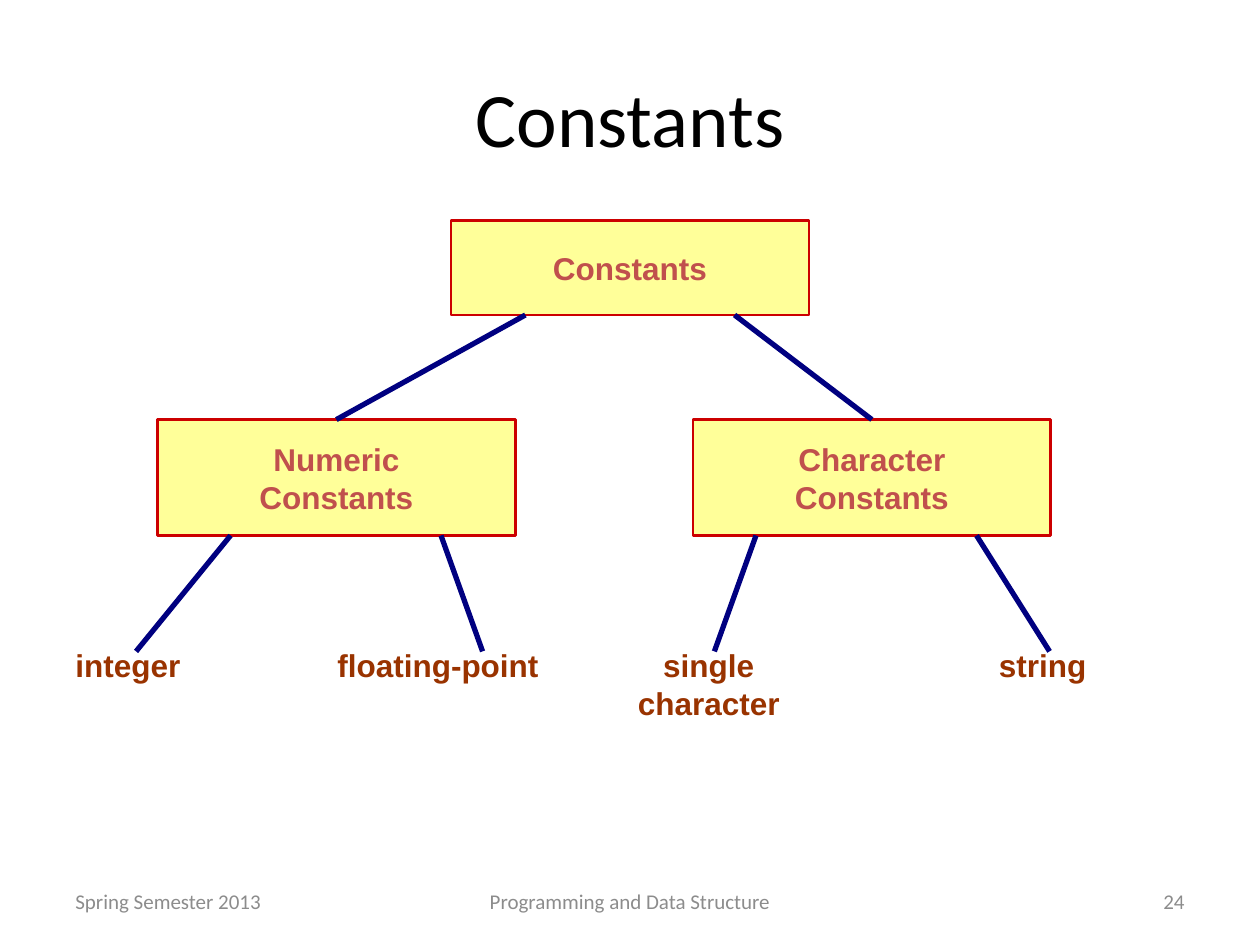
from dataclasses import dataclass

from lxml.etree import SubElement
from pptx import Presentation
from pptx.dml.color import RGBColor
from pptx.enum.shapes import MSO_CONNECTOR, MSO_SHAPE
from pptx.enum.text import MSO_ANCHOR as Anchor, PP_ALIGN as Align
from pptx.oxml.ns import qn
from pptx.util import Inches, Pt


@dataclass(frozen=True)
class Style:
    font: str
    size: int
    color: str
    bold: bool = False


@dataclass(frozen=True)
class Theme:
    title: Style = Style("Calibri", 44, "000000")
    footer: Style = Style("Calibri", 12, "8C8C8C")
    node: Style = Style("Arial", 18, "C0504D", True)
    leaf: Style = Style("Arial", 18, "993300", True)
    node_fill: str = "FFFF99"
    node_line: str = "CC0000"
    branch: str = "000080"
    node_width: float = 1.5
    branch_width: float = 3


THEME = Theme()


def rgb(value):
    return RGBColor.from_string(value)


def write(shape, lines, style, align, anchor, wrap=True):
    frame = shape.text_frame
    frame.word_wrap = wrap
    frame.vertical_anchor = anchor
    for index, line in enumerate(lines):
        paragraph = frame.add_paragraph() if index else frame.paragraphs[0]
        paragraph.alignment = align
        run = paragraph.add_run()
        run.text = line
        run.font.name = style.font
        run.font.size = Pt(style.size)
        run.font.bold = style.bold
        run.font.color.rgb = rgb(style.color)


def add_text(slide, box, lines, style, align=Align.LEFT, anchor=Anchor.MIDDLE):
    shape = slide.shapes.add_textbox(*map(Inches, box))
    write(shape, lines, style, align, anchor)


def add_node(slide, box, lines):
    shape = slide.shapes.add_shape(MSO_SHAPE.RECTANGLE, *map(Inches, box))
    shape.shadow.inherit = False
    shape.fill.solid()
    shape.fill.fore_color.rgb = rgb(THEME.node_fill)
    shape.line.color.rgb = rgb(THEME.node_line)
    shape.line.width = Pt(THEME.node_width)
    write(shape, lines, THEME.node, Align.CENTER, Anchor.MIDDLE, wrap=False)
    return shape


def add_branch(slide, start, end, child=None):
    line = slide.shapes.add_connector(
        MSO_CONNECTOR.STRAIGHT, *map(Inches, (*start, *end)))
    line.line.color.rgb = rgb(THEME.branch)
    line.line.width = Pt(THEME.branch_width)
    SubElement(line._element.spPr, qn("a:effectLst"))
    if child is not None:
        line.begin_connect(child, 0)


def add_tree(slide, box):
    left, top, width, height = box
    node_width, root_height, child_height = 2.84, 0.75, 0.92
    child_top = top + 1.58
    child_bottom = child_top + child_height
    leaf_top = top + 3.33
    branch_end = leaf_top + 0.09

    # Root, centred on the slide
    add_node(slide, (left + 3.08, top, node_width, root_height), ["Constants"])

    # Child nodes: left offset, first word, where the branch leaves the root
    children = [(0.75, "Numeric", 3.67), (5, "Character", 5.33)]
    for offset, word, root_x in children:
        child = add_node(
            slide, (left + offset, child_top, node_width, child_height),
            [word, "Constants"])
        add_branch(slide, (left + offset + node_width / 2, child_top),
                   (left + root_x, top + root_height), child)

    # Leaves: left offset, width, lines, alignment, branch start and end
    leaves = [
        (0, 1.75, ["integer"], Align.LEFT, 1.33, 0.58),
        (2.08, 2.25, ["floating-point"], Align.LEFT, 3, 3.33),
        (4.25, 1.75, ["single", "character"], Align.CENTER, 5.5, 5.17),
        (7.33, 1.75, ["string"], Align.LEFT, 7.25, 7.83),
    ]
    for offset, leaf_width, lines, align, start_x, end_x in leaves:
        add_text(slide, (left + offset, leaf_top, leaf_width, top + height - leaf_top),
                 lines, THEME.leaf, align, Anchor.TOP)
        add_branch(slide, (left + start_x, child_bottom),
                   (left + end_x, branch_end))


def add_footer(slide, box):
    left, top, width, height = box
    side, middle = 2.33, 3.17
    parts = [
        (left, side, "Spring Semester 2013", Align.LEFT),
        (left + (width - middle) / 2, middle,
         "Programming and Data Structure", Align.CENTER),
        (left + width - side, side, "24", Align.RIGHT),
    ]
    for part_left, part_width, text, align in parts:
        add_text(slide, (part_left, top, part_width, height), [text],
                 THEME.footer, align)


def main():
    presentation = Presentation()
    presentation.slide_width = Inches(10)
    presentation.slide_height = Inches(7.5)
    slide = presentation.slides.add_slide(presentation.slide_layouts[6])

    add_text(slide, (0.5, 0.3, 9, 1.25), ["Constants"], THEME.title, Align.CENTER)
    add_tree(slide, (0.5, 1.75, 9, 4.23))
    add_footer(slide, (0.5, 6.95, 9, 0.4))

    presentation.save("out.pptx")


if __name__ == "__main__":
    main()
